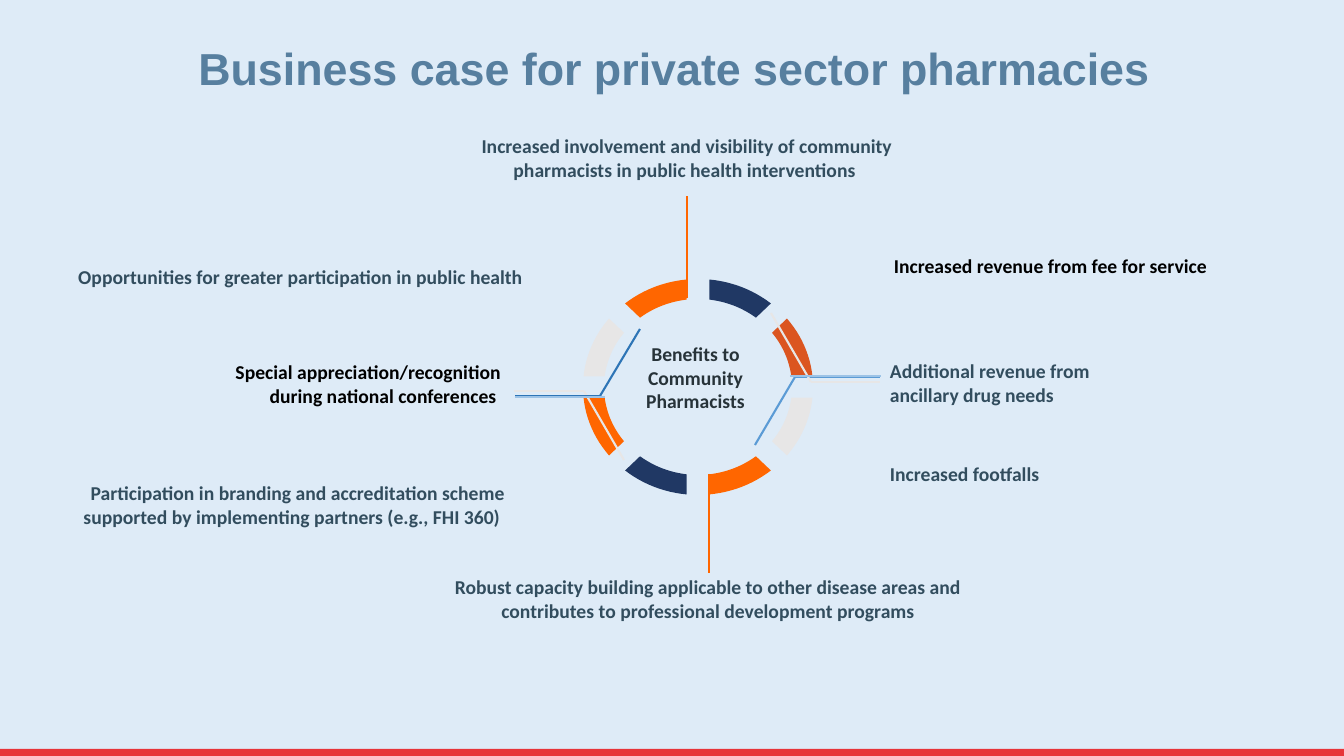
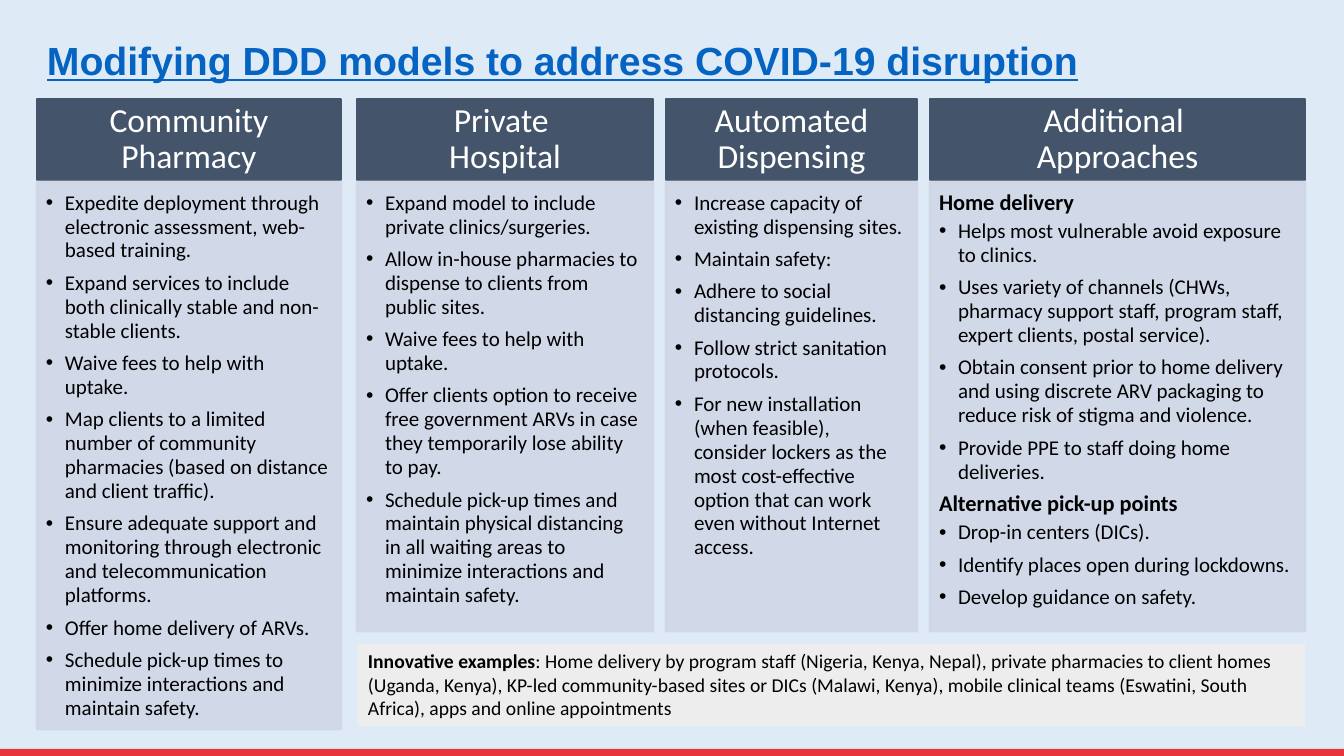
from math import asin, cos, pi, sin

from lxml.etree import SubElement
from pptx import Presentation
from pptx.dml.color import RGBColor
from pptx.enum.shapes import MSO_CONNECTOR, MSO_SHAPE
from pptx.enum.text import MSO_ANCHOR, MSO_AUTO_SIZE, PP_ALIGN
from pptx.oxml.ns import qn
from pptx.util import Pt

PX = 914400 / 100.8
WIDTH, HEIGHT = 1344, 756

SKY, RED, NAVY, ORANGE, RUST = "DEEBF7", "E73439", "203864", "FF6600", "DB5520"
SILVER, SLATE, INK, BLACK, WHITE = "E7E6E6", "324D5E", "273339", "000000", "FFFFFF"
BLUE, DEEP_BLUE, PALE_BLUE = "5B9BD5", "2E75B6", "9DC3E6"
HEADING_FILL, PANEL_FILL, NOTE_FILL = "44546A", "D0D8E8", "EDEDED"
STEEL, LINK_BLUE = "577F9F", "0563C1"

LEFT, CENTER, RIGHT = PP_ALIGN.LEFT, PP_ALIGN.CENTER, PP_ALIGN.RIGHT


def emu(px):
    return round(px * PX)


def rgb(value):
    return RGBColor.from_string(value)


class Deck:
    title_font = "Arial"
    body_font = "Calibri"

    def __init__(self):
        self.presentation = Presentation()
        self.presentation.slide_width = emu(WIDTH)
        self.presentation.slide_height = emu(HEIGHT)
        background = self.presentation.slide_master.background.fill
        background.solid()
        background.fore_color.rgb = rgb(SKY)
        self.slide = None

    def new_slide(self, title, box, size, color, align=LEFT, underline=None):
        layout = self.presentation.slide_layouts[5]
        self.slide = self.presentation.slides.add_slide(layout)
        heading = self.slide.shapes.title
        heading.left, heading.top, heading.width, heading.height = map(emu, box)
        frame = self.frame(heading, (10, 5, 10, 5), MSO_ANCHOR.BOTTOM)
        paragraph = frame.paragraphs[0]
        paragraph.alignment = align
        paragraph.line_spacing = 0.9
        run = self.run(paragraph, title, size, color, True, self.title_font)
        run.font.underline = underline
        self.block((0, 749, WIDTH, 7), RED)

    def frame(self, shape, insets, anchor=MSO_ANCHOR.TOP):
        frame = shape.text_frame
        frame.word_wrap = True
        frame.auto_size = MSO_AUTO_SIZE.NONE
        frame.vertical_anchor = anchor
        (frame.margin_left, frame.margin_top,
         frame.margin_right, frame.margin_bottom) = map(emu, insets)
        return frame

    def run(self, paragraph, text, size, color, bold=False, font=None):
        run = paragraph.add_run()
        run.text = text
        run.font.name = font or self.body_font
        run.font.size = Pt(size)
        run.font.bold = bold
        run.font.color.rgb = rgb(color)
        return run

    def paint(self, shape, fill, border=None, alpha=None):
        shape.shadow.inherit = False
        shape.fill.solid()
        shape.fill.fore_color.rgb = rgb(fill)
        if border:
            shape.line.color.rgb = rgb(fill)
            shape.line.width = Pt(border)
        else:
            shape.line.fill.background()
        if alpha:
            for color in shape._element.spPr.iter(qn("a:srgbClr")):
                SubElement(color, qn("a:alpha"), val=str(alpha * 1000))
        return shape

    def block(self, box, fill, border=None, alpha=None):
        shape = self.slide.shapes.add_shape(MSO_SHAPE.RECTANGLE, *map(emu, box))
        return self.paint(shape, fill, border, alpha)

    def outline(self, points, fill):
        corners = [(emu(x), emu(y)) for x, y in points]
        builder = self.slide.shapes.build_freeform(*corners[0])
        builder.add_line_segments(corners[1:], close=True)
        self.paint(builder.convert_to_shape(), fill)

    def rule(self, start, end, color):
        connector = self.slide.shapes.add_connector(
            MSO_CONNECTOR.STRAIGHT, *map(emu, start + end))
        connector.line.color.rgb = rgb(color)
        connector.line.width = Pt(1.5)
        SubElement(connector._element.spPr, qn("a:effectLst"))

    def label(self, text, box, align=LEFT, color=SLATE):
        shape = self.slide.shapes.add_textbox(*map(emu, box))
        paragraph = self.frame(shape, (6, 3, 6, 3)).paragraphs[0]
        paragraph.alignment = align
        self.run(paragraph, text, 14, color, True)

    def heading(self, text, box):
        shape = self.block(box, HEADING_FILL, 2)
        paragraph = self.frame(shape, (28, 16, 28, 16), MSO_ANCHOR.MIDDLE).paragraphs[0]
        paragraph.alignment = CENTER
        paragraph.line_spacing = 0.9
        for index, line in enumerate(text.split("\n")):
            if index:
                paragraph.add_line_break()
            self.run(paragraph, line, 24, WHITE)

    def panel(self, sections, box):
        shape = self.block(box, PANEL_FILL, 2, 90)
        frame = self.frame(shape, (9, 9, 12, 14))
        entries = [(text, is_heading)
                   for heading, bullets in sections
                   for text, is_heading in [(heading, True)] + [(b, False) for b in bullets]
                   if text]
        for index, (text, is_heading) in enumerate(entries):
            paragraph = frame.add_paragraph() if index else frame.paragraphs[0]
            if not is_heading:
                self.bullet(paragraph)
            paragraph.alignment = LEFT
            paragraph.line_spacing = 0.9 if is_heading else 0.95
            paragraph.space_after = Pt(3 if is_heading else 6)
            self.run(paragraph, text, 16 if is_heading else 15, BLACK, is_heading)

    def bullet(self, paragraph):
        properties = paragraph._p.get_or_add_pPr()
        properties.set("marL", str(emu(19)))
        properties.set("indent", str(-emu(19)))
        SubElement(properties, qn("a:buFont"), typeface="Arial")
        SubElement(properties, qn("a:buChar"), char="•")

    def note(self, lead, text, box):
        shape = self.block(box, NOTE_FILL)
        paragraph = self.frame(shape, (10, 5, 10, 5)).paragraphs[0]
        paragraph.alignment = LEFT
        self.run(paragraph, lead, 14, BLACK, True)
        self.run(paragraph, text, 14, BLACK)


def ring_segment(position, steps=12):
    center_x, center_y, half_gap = 698, 387, 11
    points = []
    for radius_x, radius_y, backwards in ((115, 108, False), (94, 88, True)):
        margin = asin(half_gap * 2 / (radius_x + radius_y))
        start = position * pi / 4 + margin
        sweep = pi / 4 - 2 * margin
        arc = [start + sweep * step / steps for step in range(steps + 1)]
        for angle in reversed(arc) if backwards else arc:
            points.append((center_x + radius_x * sin(angle),
                           center_y - radius_y * cos(angle)))
    return points


RING_COLORS = [NAVY, RUST, SILVER, ORANGE, NAVY, ORANGE, SILVER, ORANGE]

LEADERS = [
    ((687, 298), (687, 196), ORANGE),
    ((795, 377), (880, 377), BLUE),
    ((755, 445), (795, 377), BLUE),
    ((811, 382), (880, 382), SILVER),
    ((771, 313), (811, 382), SILVER),
    ((584, 391), (514, 391), SILVER),
    ((624, 460), (584, 391), SILVER),
    ((600, 396), (515, 396), DEEP_BLUE),
    ((640, 329), (600, 396), DEEP_BLUE),
    ((790, 376), (881, 376), PALE_BLUE),
    ((515, 397), (605, 397), PALE_BLUE),
    ((709, 474), (709, 573), ORANGE),
]

BENEFITS = [
    ("Increased footfalls", (884, 459, 355, 35), LEFT, SLATE),
    ("Additional revenue from ancillary drug needs", (884, 356, 259, 54), LEFT, SLATE),
    ("Opportunities for greater participation in public health",
     (53, 262, 476, 63), RIGHT, SLATE),
    ("Participation in branding and accreditation scheme supported by "
     "implementing partners (e.g., FHI 360) ", (33, 478, 478, 55), RIGHT, SLATE),
    ("Special appreciation/recognition during national conferences ",
     (201, 357, 306, 55), RIGHT, BLACK),
    ("Benefits to Community Pharmacists", (603, 339, 185, 96), CENTER, INK),
    ("Robust capacity building applicable to other disease areas and "
     "contributes to professional development programs", (441, 572, 534, 55), CENTER, SLATE),
    ("Increased involvement and visibility of community pharmacists in "
     "public health interventions ", (425, 131, 524, 55), CENTER, SLATE),
    ("Increased revenue from fee for service", (888, 251, 384, 35), LEFT, BLACK),
]

MODELS = [
    ("Community Pharmacy", 37, 304, 729, [(None, [
        "Expedite deployment through electronic assessment, web-based training.",
        "Expand services to include both clinically stable and non-stable clients.",
        "Waive fees to help with uptake.",
        "Map clients to a limited number of community pharmacies "
        "(based on distance and client traffic).",
        "Ensure adequate support and monitoring through electronic and "
        "telecommunication platforms.",
        "Offer home delivery of ARVs.",
        "Schedule pick-up times to minimize interactions and maintain safety.",
    ])]),
    ("Private \nHospital", 357, 296, 631, [(None, [
        "Expand model to include private clinics/surgeries.",
        "Allow in-house pharmacies to dispense to clients from public sites.",
        "Waive fees to help with uptake.",
        "Offer clients option to receive free government ARVs in case they "
        "temporarily lose ability to pay.",
        "Schedule pick-up times and maintain physical distancing in all waiting "
        "areas to minimize interactions and maintain safety.",
    ])]),
    ("Automated Dispensing", 666, 251, 631, [(None, [
        "Increase capacity of existing dispensing sites.",
        "Maintain safety:",
        "Adhere to social distancing guidelines.",
        "Follow strict sanitation protocols.",
        "For new installation (when feasible), consider lockers as the most "
        "cost-effective option that can work even without Internet access.",
    ])]),
    ("Additional \nApproaches", 930, 375, 631, [
        ("Home delivery", [
            "Helps most vulnerable avoid exposure to clinics.",
            "Uses variety of channels (CHWs, pharmacy support staff, program staff, "
            "expert clients, postal service).",
            "Obtain consent prior to home delivery and using discrete ARV packaging "
            "to reduce risk of stigma and violence.",
            "Provide PPE to staff doing home deliveries.",
        ]),
        ("Alternative pick-up points", [
            "Drop-in centers (DICs).",
            "Identify places open during lockdowns.",
            "Develop guidance on safety.",
        ]),
    ]),
]


def business_case(deck):
    deck.new_slide("Business case for private sector pharmacies",
                   (95, 12, 1159, 88), 32, STEEL, CENTER)
    for position, color in enumerate(RING_COLORS):
        deck.outline(ring_segment(position), color)
    for start, end, color in LEADERS:
        deck.rule(start, end, color)
    for text, box, align, color in BENEFITS:
        deck.label(text, box, align, color)


def modified_models(deck):
    deck.new_slide("Modifying DDD models to address COVID-19 disruption",
                   (37, 21, 1159, 68), 28, LINK_BLUE, underline=True)
    heading_top, heading_height, panel_top = 99, 81, 182
    for name, left, width, bottom, sections in MODELS:
        deck.heading(name, (left, heading_top, width, heading_height))
        deck.panel(sections, (left, panel_top, width, bottom - panel_top))
    deck.note("Innovative examples",
              ": Home delivery by program staff (Nigeria, Kenya, Nepal), private pharmacies "
              "to client homes (Uganda, Kenya), KP-led community-based sites or DICs (Malawi, "
              "Kenya), mobile clinical teams (Eswatini, South Africa), apps and online "
              "appointments", (358, 644, 947, 82))


def main():
    deck = Deck()
    business_case(deck)
    modified_models(deck)
    deck.presentation.save("out.pptx")


if __name__ == "__main__":
    main()
